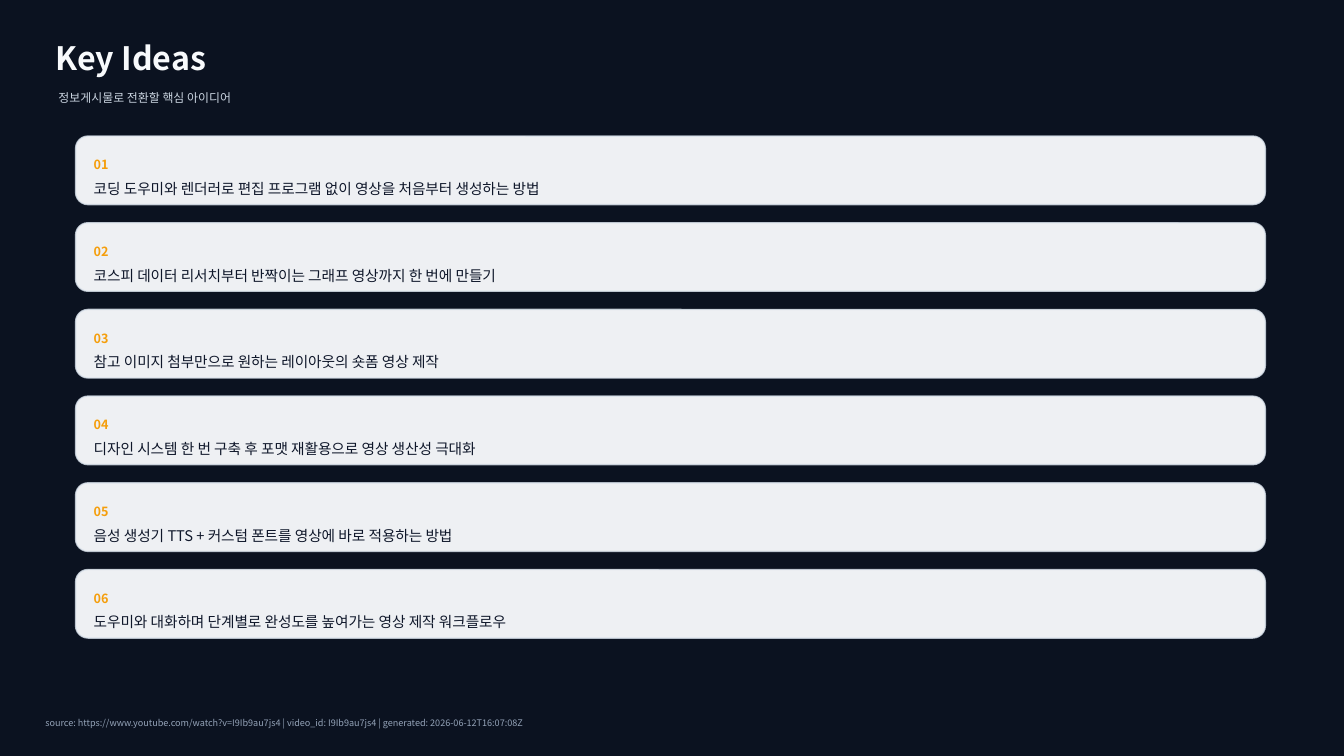
"""Build the Key Ideas slide: a heading, six numbered idea cards and a source line."""
from dataclasses import dataclass

from lxml.etree import SubElement
from pptx import Presentation
from pptx.dml.color import RGBColor
from pptx.enum.shapes import MSO_SHAPE
from pptx.enum.text import MSO_ANCHOR, MSO_AUTO_SIZE, PP_ALIGN
from pptx.oxml.ns import qn
from pptx.util import Inches, Pt


@dataclass(frozen=True)
class TextStyle:
    size: float
    color: str
    bold: bool = False


@dataclass(frozen=True)
class Theme:
    font: str = "Noto Sans CJK KR"
    background: str = "0B1220"
    card_fill: str = "F8FAFC"
    card_line: str = "D7E0EA"
    fill_opacity: int = 96
    line_opacity: int = 80
    title: TextStyle = TextStyle(23, "F8FAFC", True)
    subtitle: TextStyle = TextStyle(8.5, "CBD5E1")
    number: TextStyle = TextStyle(9, "F59E0B", True)
    idea: TextStyle = TextStyle(10.5, "0F172A")
    source: TextStyle = TextStyle(6.5, "94A3B8")


@dataclass(frozen=True)
class Area:
    column: int
    row: int
    columns: int
    rows: int

    def lengths(self) -> tuple:
        return tuple(Inches(cells * CELL)
                     for cells in (self.column, self.row, self.columns, self.rows))

    def inside(self, inset: int, drop: int, rows: int) -> "Area":
        return Area(self.column + inset, self.row + drop, self.columns - 2 * inset, rows)


THEME = Theme()
CELL = 0.01
PAGE = Area(0, 0, 1333, 750)
FIRST_CARD = Area(75, 135, 1180, 68)
CARD_PITCH = 86
CARD_INSET = 18
FRAME_FORMAT = {
    "margin_left": 0, "margin_top": 0, "margin_right": 0, "margin_bottom": 0,
    "word_wrap": True, "auto_size": MSO_AUTO_SIZE.NONE,
    "vertical_anchor": MSO_ANCHOR.MIDDLE,
}
IDEAS = (
    "코딩 도우미와 렌더러로 편집 프로그램 없이 영상을 처음부터 생성하는 방법",
    "코스피 데이터 리서치부터 반짝이는 그래프 영상까지 한 번에 만들기",
    "참고 이미지 첨부만으로 원하는 레이아웃의 숏폼 영상 제작",
    "디자인 시스템 한 번 구축 후 포맷 재활용으로 영상 생산성 극대화",
    "음성 생성기 TTS + 커스텀 폰트를 영상에 바로 적용하는 방법",
    "도우미와 대화하며 단계별로 완성도를 높여가는 영상 제작 워크플로우",
)


def set_all(target, values: dict) -> None:
    for name, value in values.items():
        setattr(target, name, value)


def write(box, text: str, style: TextStyle) -> None:
    set_all(box.text_frame, FRAME_FORMAT)
    para = box.text_frame.paragraphs[0]
    para.alignment = PP_ALIGN.LEFT
    span = para.add_run()
    span.text = text
    set_all(span.font, {"name": THEME.font, "size": Pt(style.size), "bold": style.bold})
    span.font.color.rgb = RGBColor.from_string(style.color)
    SubElement(span.font._element, qn("a:ea"), typeface=THEME.font)


def add_text(page, area: Area, text: str, style: TextStyle) -> None:
    write(page.shapes.add_textbox(*area.lengths()), text, style)


def add_card(page, area: Area, number: int, idea: str) -> None:
    card = page.shapes.add_shape(MSO_SHAPE.ROUNDED_RECTANGLE, *area.lengths())
    card.adjustments[0] = 0.18
    card.shadow.inherit = False
    card.fill.solid()
    card.fill.fore_color.rgb = RGBColor.from_string(THEME.card_fill)
    card.line.color.rgb = RGBColor.from_string(THEME.card_line)
    card.line.width = Pt(1)
    colors = card._element.spPr.iter(qn("a:srgbClr"))
    for color, opacity in zip(colors, (THEME.fill_opacity, THEME.line_opacity)):
        SubElement(color, qn("a:alpha"), val=str(opacity * 1000))
    add_text(page, area.inside(CARD_INSET, 16, 25), f"{number:02d}", THEME.number)
    add_text(page, area.inside(CARD_INSET, 50, 4), idea, THEME.idea)


def main() -> None:
    deck = Presentation()
    _, _, deck.slide_width, deck.slide_height = PAGE.lengths()
    page = deck.slides.add_slide(deck.slide_layouts.get_by_name("Title Only"))
    page.background.fill.solid()
    page.background.fill.fore_color.rgb = RGBColor.from_string(THEME.background)

    title = page.shapes.title
    set_all(title, dict(zip(("left", "top", "width", "height"),
                            Area(55, 35, 1200, 45).lengths())))
    write(title, "Key Ideas", THEME.title)
    add_text(page, Area(58, 83, 1150, 28), "정보게시물로 전환할 핵심 아이디어", THEME.subtitle)

    for index, idea in enumerate(IDEAS):
        area = FIRST_CARD.inside(0, index * CARD_PITCH, FIRST_CARD.rows)
        add_card(page, area, index + 1, idea)

    add_text(page, Area(45, 705, 1240, 25),
             "source: https://www.youtube.com/watch?v=I9Ib9au7js4 | "
             "video_id: I9Ib9au7js4 | generated: 2026-06-12T16:07:08Z", THEME.source)
    deck.save("out.pptx")


if __name__ == "__main__":
    main()
